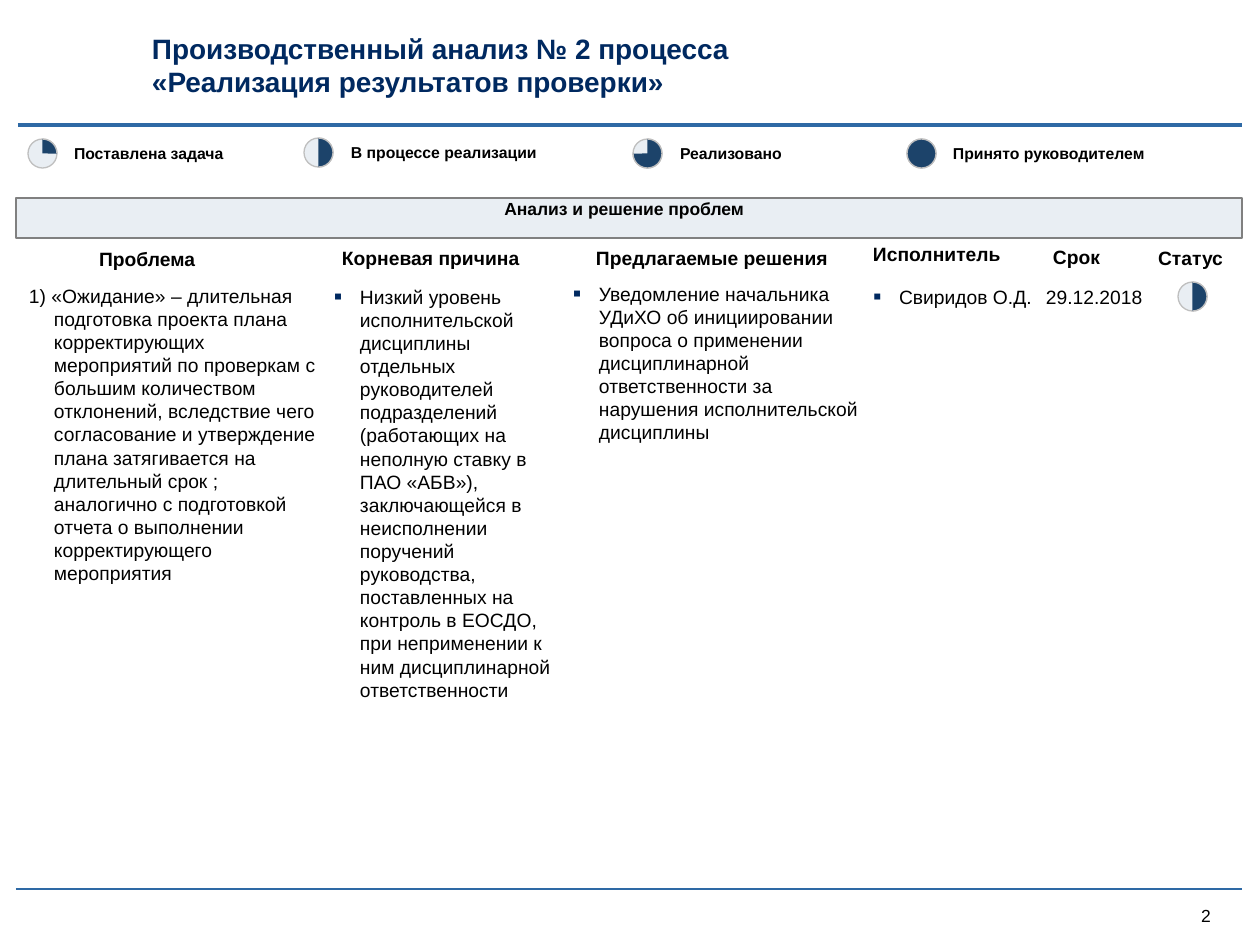
from lxml.etree import SubElement
from pptx import Presentation
from pptx.dml.color import RGBColor
from pptx.enum.shapes import MSO_CONNECTOR as Link, MSO_SHAPE as Kind
from pptx.enum.text import MSO_ANCHOR as Anchor, PP_ALIGN as Align
from pptx.oxml.ns import qn
from pptx.util import Emu, Pt

SCALE = 914400 / 126
NAVY, BLUE, DARK, PALE = "002960", "2E69A5", "1C436A", "E9EEF3"
BLACK, GREY, SILVER = "000000", "808080", "BFBFBF"
TITLE = ["Производственный анализ № 2 процесса",
         "«Реализация результатов проверки»"]
BAND = "Анализ и решение проблем"
# text, left, top, width, dial left, dial top, quarters filled
LEGEND = [
    ("Поставлена задача", 74, 144, 160, 28, 139, 1),
    ("В процессе реализации", 351, 143, 200, 304, 138, 2),
    ("Реализовано", 680, 144, 110, 633, 139, 3),
    ("Принято руководителем", 953, 144, 205, 907, 139, 4),
]
# text, left, top, width
HEADS = [
    ("Проблема", 99, 247, 146),
    ("Корневая причина", 342, 246, 190),
    ("Предлагаемые решения", 596, 246, 253),
    ("Исполнитель", 873, 242, 150),
    ("Срок", 1053, 245, 72),
    ("Статус", 1158, 246, 83),
]
# text, left, top, width, height, hanging indent, bulleted
CELLS = [
    ("1) «Ожидание» – длительная подготовка проекта плана корректирующих "
     "мероприятий по проверкам с большим количеством отклонений, вследствие "
     "чего согласование и утверждение плана затягивается на длительный срок ; "
     "аналогично с подготовкой отчета о выполнении корректирующего мероприятия",
     29, 284, 291, 304, 25, False),
    ("Низкий уровень исполнительской дисциплины отдельных руководителей "
     "подразделений (работающих на неполную ставку в ПАО «АБВ»), "
     "заключающейся в неисполнении поручений руководства, поставленных на "
     "контроль в ЕОСДО, при неприменении к ним дисциплинарной ответственности",
     334, 285, 218, 420, 26, True),
    ("Уведомление начальника УДиХО об инициировании вопроса о применении "
     "дисциплинарной ответственности за нарушения исполнительской дисциплины",
     573, 282, 290, 164, 26, True),
    ("Свиридов О.Д.", 873, 285, 180, 24, 26, True),
    ("29.12.2018", 1046, 285, 112, 24, 0, False),
]
STATUS = (1178, 282, 2)
RULES = [(18, 1242, 125, 2.25), (16, 1242, 889, 0.75)]


def px(n):
    return Emu(round(n * SCALE))


def box(*sides):
    return [px(n) for n in sides]


def rgb(code):
    return RGBColor.from_string(code)


def write(shape, lines, size, color=BLACK, bold=False, anchor=Anchor.TOP,
          align=Align.LEFT, foot=0, hang=0, bullet=False):
    frame = shape.text_frame
    look = dict(word_wrap=True, vertical_anchor=anchor, margin_left=0,
                margin_right=0, margin_top=0, margin_bottom=px(foot))
    for key, val in look.items():
        setattr(frame, key, val)
    for i, line in enumerate(lines):
        par = frame.add_paragraph() if i else frame.paragraphs[0]
        par.text, par.alignment = line, align
        if hang:
            props = par._p.get_or_add_pPr()
            props.set("marL", str(px(hang)))
            props.set("indent", str(-px(hang)))
            if bullet:
                add_bullet(props)
        style = dict(name="Arial", size=Pt(size), bold=bold)
        for key, val in style.items():
            setattr(par.runs[0].font, key, val)
        par.runs[0].font.color.rgb = rgb(color)


def add_bullet(props):
    tint = SubElement(props, qn("a:buClr"))
    SubElement(tint, qn("a:srgbClr"), val=NAVY)
    SubElement(props, qn("a:buSzPct"), val="125000")
    SubElement(props, qn("a:buFont"), typeface="Arial")
    SubElement(props, qn("a:buChar"), char="▪")


def label(slide, text, left, top, width, height, size, **look):
    shape = slide.shapes.add_textbox(*box(left, top, width, height))
    write(shape, [text], size, **look)


def paint(shape, fill, edge):
    shape.shadow.inherit = False
    shape.fill.solid()
    shape.fill.fore_color.rgb = rgb(fill)
    shape.line.color.rgb = rgb(edge)
    shape.line.width = Pt(0.75)


def dial(slide, left, top, count):
    """Draw a progress circle with count quarters filled from twelve o'clock."""
    group = slide.shapes.add_group_shape()
    for kind, fill in ((Kind.OVAL, PALE), (Kind.ARC, DARK)):
        part = group.shapes.add_shape(kind, *box(left, top, 29, 29))
        paint(part, fill, SILVER)
    part.adjustments[0] = 162
    part.adjustments[1] = (count - 1) * 54


def rule(slide, left, right, y, weight):
    line = slide.shapes.add_connector(Link.STRAIGHT, *box(left, y, right, y))
    line.line.color.rgb = rgb(BLUE)
    line.line.width = Pt(weight)
    SubElement(line._element.spPr, qn("a:effectLst"))


def main():
    deck = Presentation()
    deck.slide_width, deck.slide_height = box(1260, 945)
    slide = deck.slides.add_slide(deck.slide_layouts[5])
    for args in RULES:
        rule(slide, *args)
    label(slide, "2", 1201, 905, 30, 21, 10, anchor=Anchor.MIDDLE)

    title = slide.shapes.title
    title.left, title.top, title.width, title.height = box(152, 31, 1000, 68)
    write(title, TITLE, 16, NAVY, True, Anchor.MIDDLE)

    for text, left, top, width, x, y, count in LEGEND:
        label(slide, text, left, top, width, 19, 9, bold=True)
        dial(slide, x, y, count)

    band = slide.shapes.add_shape(Kind.RECTANGLE, *box(16, 198, 1226, 40))
    paint(band, PALE, GREY)
    label(slide, BAND, 16, 198, 1216, 43, 10, bold=True, align=Align.CENTER)

    for text, left, top, width in HEADS:
        label(slide, text, left, top, width, 26, 11, bold=True,
              anchor=Anchor.BOTTOM, foot=3)
    for text, left, top, width, height, hang, bullet in CELLS:
        label(slide, text, left, top, width, height, 11, hang=hang,
              bullet=bullet)
    dial(slide, *STATUS)
    deck.save("out.pptx")


if __name__ == "__main__":
    main()
